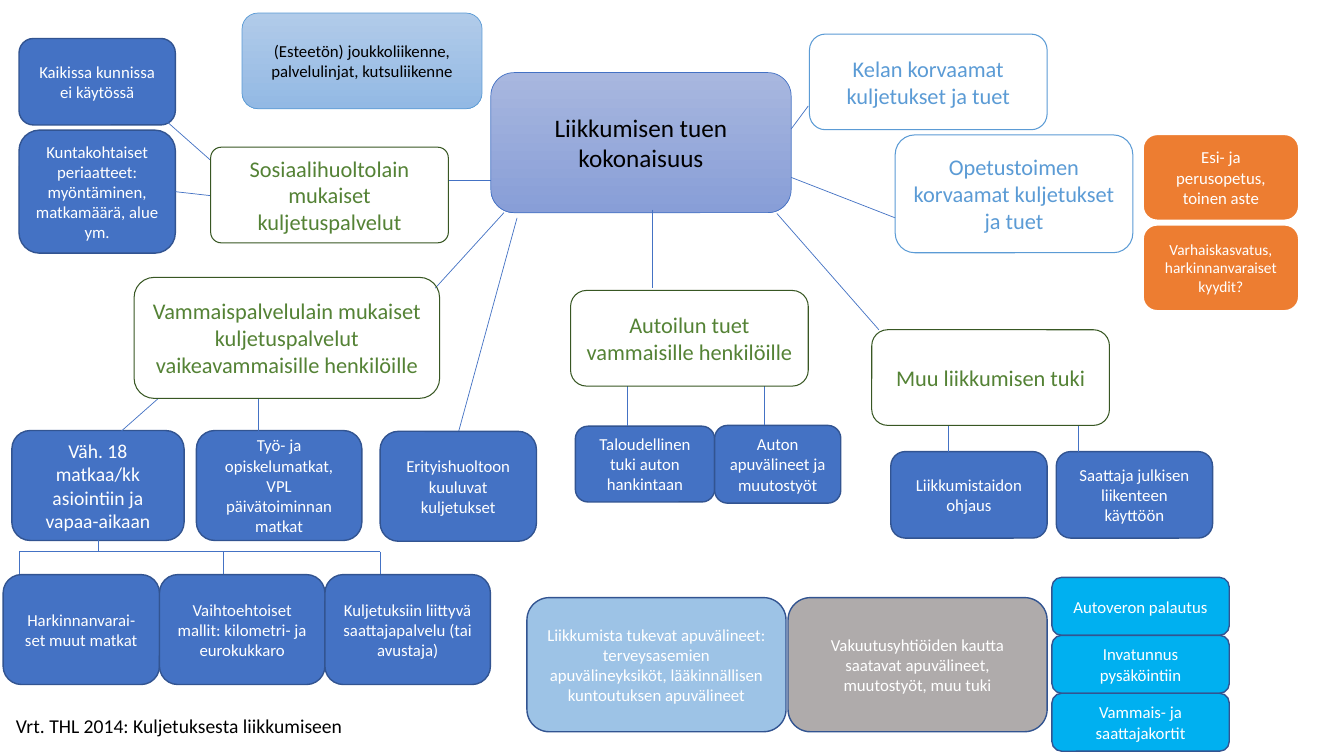
import pptx
import pptx.util
import pptx.dml.color
import pptx.enum.shapes
import pptx.enum.text
import pptx.oxml.ns
from lxml import etree

Cm = pptx.util.Cm
Pt = pptx.util.Pt
ALIGN = pptx.enum.text.PP_ALIGN
ANCHOR = pptx.enum.text.MSO_ANCHOR

# Card looks: fill (none, one colour or two for a gradient), edge, edge width, ink, text size
HUB = dict(fill=["A8B7DF", "889ED7"], edge="4472C4", width=0.5, ink="000000", size=18)
BUS = dict(fill=["B1CBE9", "93B9E4"], edge="5B9BD5", width=0.5, ink="000000", size=12)
GREEN = dict(fill=[], edge="385723", width=0.75, ink="548235", size=16)
SKY = dict(fill=[], edge="5B9BD5", width=0.75, ink="5B9BD5", size=16)
BLUE = dict(fill=["4472C4"], edge="325491", width=1, ink="FFFFFF", size=12)
BIG = dict(BLUE, size=14)
PALE = dict(BLUE, fill=["9DC3E6"])
GREY = dict(BLUE, fill=["AFABAB"])
CYAN = dict(BLUE, fill=["00B0F0"])
WARM = dict(BLUE, fill=["ED7D31"], edge="FFFFFF", width=1.5)
SMALL = dict(WARM, size=11)


def paint(code):
    return pptx.dml.color.RGBColor.from_string(code)


def apply(target, values):
    for name, value in values.items():
        setattr(target, name, value)


def write(frame, text, ink, size, align):
    para = frame.paragraphs[0]
    para.alignment = align
    run = para.add_run()
    run.text = text
    apply(run.font, dict(name="Calibri", size=Pt(size)))
    run.font.color.rgb = paint(ink)


def card(page, box, text, look, curve=None):
    kind = pptx.enum.shapes.MSO_SHAPE.ROUNDED_RECTANGLE
    shape = page.shapes.add_shape(kind, *map(Cm, box))
    shape.shadow.inherit = False
    if curve:
        shape.adjustments[0] = curve
    fill = look["fill"]
    if len(fill) == 2:
        shape.fill.gradient()
        shape.fill.gradient_angle = 270
        for stop, code in zip(shape.fill.gradient_stops, fill):
            stop.color.rgb = paint(code)
    elif fill:
        shape.fill.solid()
        shape.fill.fore_color.rgb = paint(fill[0])
    else:
        shape.fill.background()
    shape.line.color.rgb = paint(look["edge"])
    shape.line.width = Pt(look["width"])
    apply(shape.text_frame, dict(word_wrap=True, vertical_anchor=ANCHOR.MIDDLE))
    write(shape.text_frame, text, look["ink"], look["size"], ALIGN.CENTER)


def link(page, box, x1, y1, x2, y2):
    """Draw a thin line between two points counted from the corner of the box."""
    left, top = box[:2]
    ends = (left + x1, top + y1, left + x2, top + y2)
    kind = pptx.enum.shapes.MSO_CONNECTOR.STRAIGHT
    line = page.shapes.add_connector(kind, *map(Cm, ends))
    line.line.color.rgb = paint("4472C4")
    line.line.width = Pt(0.5)
    etree.SubElement(line._element.spPr, pptx.oxml.ns.qn("a:effectLst"))


# Central card with its spokes
def hub(page, box, text, spokes):
    card(page, box, text, HUB)
    for spoke in spokes:
        link(page, box, *spoke)


# Heading card with leaf cards and links placed from its corner
def branch(page, box, text, look, leaves=(), links=(), curve=None):
    left, top = box[:2]
    for (x, y, w, h), label, style in leaves:
        card(page, (left + x, top + y, w, h), label, style)
    for ends in links:
        link(page, box, *ends)
    card(page, box, text, look, curve)


# Row of cards hanging from a shared bar
def trips(page, box, parts):
    left, top, _, high = box
    bar, first, last = -0.58, 0.4, 9.5
    link(page, box, 2.41, -0.87, 2.41, bar)
    link(page, box, first, bar, last, bar)
    for x in (first, 5.56, last):
        link(page, box, x, bar, x, 0)
    for wide, text in parts:
        card(page, (left, top, wide, high), text, BLUE)
        left += wide


# Cards side by side
def aids(page, box, parts, gap=0.05):
    left, top, wide, high = box
    step = (wide + gap) / len(parts)
    for i, (text, look) in enumerate(parts):
        card(page, (left + i * step, top, step - gap, high), text, look)


# Cards on top of each other
def stack(page, box, texts):
    left, top, wide, high = box
    step = high / len(texts)
    for i, text in enumerate(texts):
        card(page, (left, top + i * step, wide, step), text, CYAN)


# Source line
def note(page, box, text):
    frame = page.shapes.add_textbox(*map(Cm, box)).text_frame
    frame.word_wrap = True
    write(frame, text, "000000", 14, ALIGN.LEFT)


def main():
    deck = pptx.Presentation()
    apply(deck, dict(slide_width=Cm(33.87), slide_height=Cm(19.05)))
    page = deck.slides.add_slide(deck.slide_layouts[6])

    hub(page, (12.37, 1.83, 7.57, 3.53), "Liikkumisen tuen kokonaisuus", [
        (0, 2.72, -1.07, 2.72), (0.33, 3.53, -1.4, 5.43),
        (4.06, 3.45, 4.06, 5.43), (7.21, 3.55, 9.78, 6.48),
        (7.57, 2.64, 10.19, 3.66), (8, 0.84, 7.57, 1.42),
        (0.66, 3.66, -0.81, 9.04)])
    card(page, (6.1, 0.33, 6.05, 2.41),
         "(Esteetön) joukkoliikenne, palvelulinjat, kutsuliikenne", BUS)

    branch(page, (5.31, 3.71, 5.99, 2.41),
           "Sosiaalihuoltolain mukaiset kuljetuspalvelut", GREEN, [
               ((-4.83, -2.74, 3.94, 2.18), "Kaikissa kunnissa ei käytössä", BLUE),
               ((-4.83, -0.43, 3.94, 3.1), "Kuntakohtaiset periaatteet: "
                "myöntäminen, matkamäärä, alue ym.", BLUE)],
           [(-0.89, 1.12, 0, 1.22), (-1.12, -0.66, 0, 0.33)], curve=0.11)
    branch(page, (3.38, 6.99, 7.7, 3.05), "Vammaispalvelulain mukaiset "
           "kuljetuspalvelut vaikeavammaisille henkilöille", GREEN, [
               ((-3.08, 3.86, 4.34, 2.77),
                "Väh. 18 matkaa/kk asiointiin ja vapaa-aikaan", BIG),
               ((1.57, 3.86, 4.17, 2.77),
                "Työ- ja opiskelumatkat, VPL päivätoiminnan matkat", BLUE),
               ((6.2, 3.88, 3.94, 2.77),
                "Erityishuoltoon kuuluvat kuljetukset", BLUE)],
           [(0.61, 3.05, -0.33, 3.88), (3.12, 3.05, 3.12, 3.88)])
    branch(page, (20.4, 0.86, 5.99, 2.41),
           "Kelan korvaamat kuljetukset ja tuet", SKY)
    branch(page, (22.56, 3.4, 5.99, 2.97),
           "Opetustoimen korvaamat kuljetukset ja tuet", SKY, [
               ((6.24, -0.02, 3.94, 2.18), "Esi- ja perusopetus, toinen aste", WARM),
               ((6.24, 2.26, 3.94, 2.18),
                "Varhaiskasvatus, harkinnanvaraiset kyydit?", SMALL)])
    branch(page, (14.38, 7.32, 5.99, 2.41),
           "Autoilun tuet vammaisille henkilöille", GREEN, [
               ((0.12, 3.42, 3.51, 1.91), "Taloudellinen tuki auton hankintaan", BLUE),
               ((3.63, 3.4, 3.18, 1.96), "Auton apuvälineet ja muutostyöt", BLUE)],
           [(1.44, 2.41, 1.44, 3.42), (4.87, 2.41, 4.87, 3.4)])
    branch(page, (21.97, 8.31, 5.99, 2.41), "Muu liikkumisen tuki", GREEN, [
        ((0.48, 3.07, 3.94, 2.18), "Liikkumistaidon ohjaus", BLUE),
        ((4.65, 3.07, 3.94, 2.18), "Saattaja julkisen liikenteen käyttöön", BLUE)],
           [(1.93, 2.41, 1.93, 3.07), (5.21, 2.41, 5.21, 3.07)])

    trips(page, (0.08, 14.48, 12.28, 2.77), [
        (3.94, "Harkinnanvarai-set muut matkat"),
        (4.17, "Vaihtoehtoiset mallit: kilometri- ja eurokukkaro"),
        (4.17, "Kuljetuksiin liittyvä saattajapalvelu (tai avustaja)")])
    aids(page, (13.28, 15.06, 13.11, 3.38), [
        ("Liikkumista tukevat apuvälineet: terveysasemien apuvälineyksiköt, "
         "lääkinnällisen kuntoutuksen apuvälineet", PALE),
        ("Vakuutusyhtiöiden kautta saatavat apuvälineet, muutostyöt, muu tuki", GREY)])
    stack(page, (26.51, 14.55, 4.47, 4.38), [
        "Autoveron palautus", "Invatunnus pysäköintiin", "Vammais- ja saattajakortit"])
    note(page, (0.15, 17.86, 10.82, 0.86), "Vrt. THL 2014: Kuljetuksesta liikkumiseen")

    deck.save("out.pptx")


if __name__ == "__main__":
    main()
